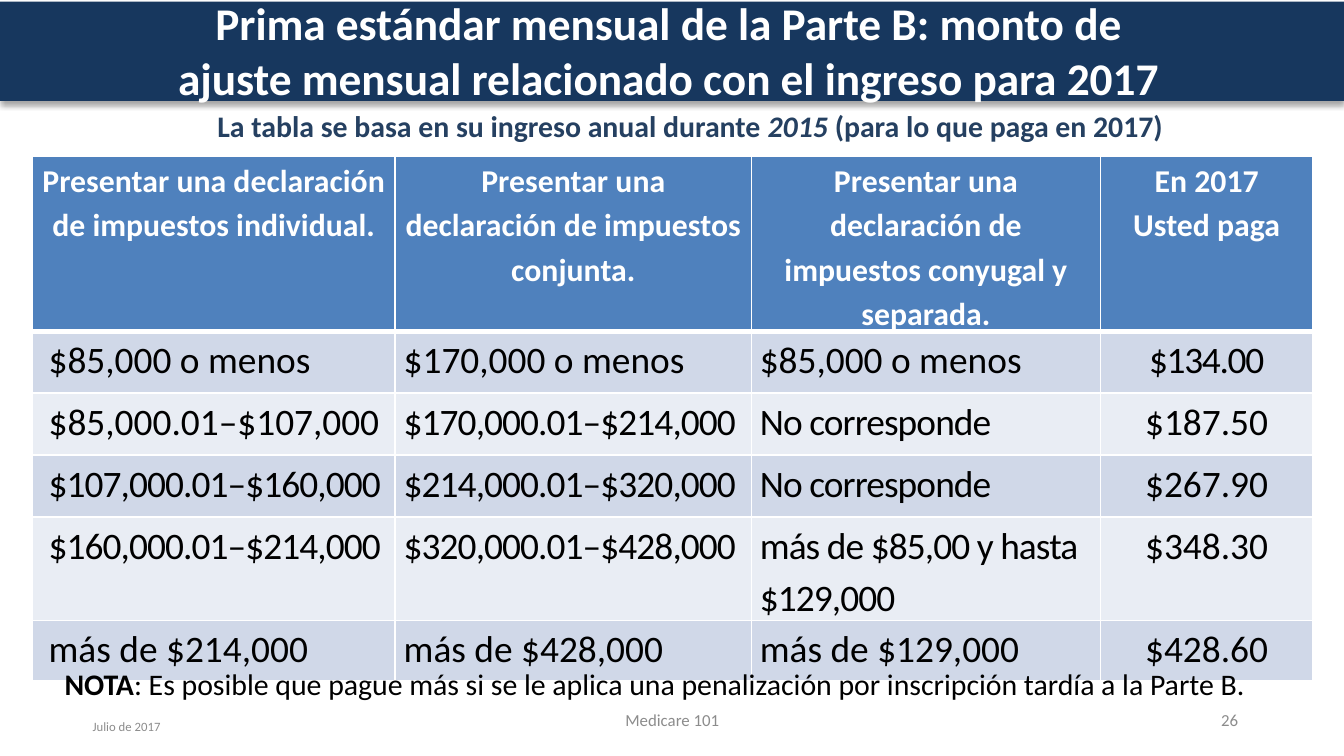
from lxml.etree import SubElement
from pptx import Presentation
from pptx.dml.color import RGBColor
from pptx.enum.shapes import MSO_SHAPE as Shape
from pptx.enum.text import MSO_ANCHOR as Anchor, PP_ALIGN as Align
from pptx.oxml import parse_xml
from pptx.oxml.ns import nsdecls, qn
from pptx.util import Cm, Pt

FONT = "Calibri"
WHITE, BLACK, GRAY = "FFFFFF", "000000", "8C8C8C"
NAVY, SUBTITLE_BLUE = "17375E", "254061"
HEADER_BLUE, BAND_DARK, BAND_LIGHT = "4F81BD", "D0D8E8", "E9EDF4"

COLUMN_WIDTHS = [6.86, 6.73, 6.6, 4.01]
ROW_HEIGHTS = [2.62, 1.17, 1.17, 1.17, 1.96, 1.14]
HEADERS = [
    ["Presentar una declaración de impuestos individual."],
    ["Presentar una declaración de impuestos conjunta."],
    ["Presentar una declaración de impuestos conyugal y separada."],
    ["En 2017", "Usted paga"],
]
INCOME_ROWS = [
    ["$85,000 o menos", "$170,000 o menos", "$85,000 o menos", "$134.00"],
    ["$85,000.01–$107,000", "$170,000.01–$214,000", "No corresponde", "$187.50"],
    ["$107,000.01–$160,000", "$214,000.01–$320,000", "No corresponde", "$267.90"],
    ["$160,000.01–$214,000", "$320,000.01–$428,000",
     "más de $85,00 y hasta $129,000", "$348.30"],
    ["más de $214,000", "más de $428,000", "más de $129,000", "$428.60"],
]
LETTER_SPACING = [
    [0, 0, 0, -70],
    [0, -50, -50, 0],
    [-50, -50, -50, 0],
    [-50, -50, -50, 0],
    [0, 0, 0, 0],
]


def color(code):
    return RGBColor.from_string(code)


def add_run(para, text, size, code, bold=False, italic=False, spacing=0):
    span = para.add_run()
    span.text = text
    font = span.font
    font.name, font.size = FONT, Pt(size)
    font.bold, font.italic = bold, italic
    font.color.rgb = color(code)
    if spacing:
        span._r.get_or_add_rPr().set("spc", str(spacing))


def add_text(page, place, align=Align.LEFT, anchor=Anchor.TOP):
    box = page.shapes.add_textbox(*map(Cm, place))
    frame = box.text_frame
    frame.word_wrap = True
    frame.vertical_anchor = anchor
    para = frame.paragraphs[0]
    para.alignment = align
    return para


def add_title_band(page):
    band = page.shapes.add_shape(Shape.RECTANGLE, Cm(0), Cm(0.03), Cm(25.4), Cm(1.88))
    band.fill.solid()
    band.fill.fore_color.rgb = color(NAVY)
    band.line.fill.background()
    band.shadow.inherit = False
    effects = band._element.spPr.find(qn("a:effectLst"))
    effects.append(parse_xml(
        f'<a:outerShdw {nsdecls("a")} blurRad="{Pt(3.1)}" dist="{Pt(1.8)}" '
        'dir="5400000" rotWithShape="0"><a:srgbClr val="000000">'
        '<a:alpha val="35000"/></a:srgbClr></a:outerShdw>'))


def add_borders(cell, bottom=1, top=1):
    properties = cell._tc.get_or_add_tcPr()
    for side, width in (("L", 1), ("R", 1), ("T", top), ("B", bottom)):
        line = SubElement(properties, qn(f"a:ln{side}"), w=str(Pt(width)))
        fill = SubElement(line, qn("a:solidFill"))
        SubElement(fill, qn("a:srgbClr"), val=WHITE)


def style_cell(cell, fill, left=0.16, top=1, bottom=1):
    add_borders(cell, bottom, top)
    cell.fill.solid()
    cell.fill.fore_color.rgb = color(fill)
    cell.margin_left, cell.margin_right = Cm(left), Cm(0.16)
    cell.margin_top = cell.margin_bottom = Cm(0)


def fill_cell(cell, lines, size, code, align, bold=False, spacing=0):
    frame = cell.text_frame
    for index, text in enumerate(lines):
        para = frame.add_paragraph() if index else frame.paragraphs[0]
        para.alignment = align
        para.line_spacing = 1.15
        add_run(para, text, size, code, bold=bold, spacing=spacing)


def add_premium_table(page):
    table = page.shapes.add_table(
        len(ROW_HEIGHTS), len(COLUMN_WIDTHS), Cm(0.61), Cm(2.95),
        Cm(sum(COLUMN_WIDTHS)), Cm(sum(ROW_HEIGHTS))).table
    table.horz_banding = False
    for column, width in zip(table.columns, COLUMN_WIDTHS):
        column.width = Cm(width)
    for row, height in zip(table.rows, ROW_HEIGHTS):
        row.height = Cm(height)

    for column, lines in enumerate(HEADERS):
        cell = table.cell(0, column)
        style_cell(cell, HEADER_BLUE, bottom=3)
        fill_cell(cell, lines, 17, WHITE, Align.CENTER, bold=True)

    last = len(COLUMN_WIDTHS) - 1
    for row, (texts, spacings) in enumerate(zip(INCOME_ROWS, LETTER_SPACING), 1):
        band = BAND_DARK if row % 2 else BAND_LIGHT
        for column, (text, spacing) in enumerate(zip(texts, spacings)):
            cell = table.cell(row, column)
            style_cell(cell, band, left=0.16 if column else 0.31, top=3 if row == 1 else 1)
            align = Align.CENTER if column == last else Align.LEFT
            fill_cell(cell, [text], 20, BLACK, align, spacing=spacing)


def add_note(page):
    para = add_text(page, (0.97, 12.45, 23.11, 0.94))
    properties = para._p.get_or_add_pPr()
    properties.set("marL", str(Cm(1.55)))
    properties.set("indent", str(-Cm(1.55)))
    add_run(para, "NOTA", 16, BLACK, bold=True)
    add_run(para, ": Es posible que pague más si se le aplica una penalización "
                  "por inscripción tardía a la Parte B.", 16, BLACK)


def add_footer(page):
    for text, size, place, align in (
        ("Julio de 2017", 6.8, (1.5, 13.36, 4.29, 0.76), Align.LEFT),
        ("Medicare 101", 9, (8.41, 13.23, 8.59, 0.76), Align.CENTER),
        ("26", 9, (17.93, 13.23, 5.72, 0.76), Align.RIGHT),
    ):
        add_run(add_text(page, place, align, Anchor.MIDDLE), text, size, GRAY)


def main():
    deck = Presentation()
    deck.slide_width, deck.slide_height = Cm(25.4), Cm(14.29)
    page = deck.slides.add_slide(deck.slide_layouts[6])

    add_title_band(page)
    title = add_text(page, (2.92, -0.1, 19.43, 2.08), Align.CENTER, Anchor.MIDDLE)
    add_run(title, "Prima estándar mensual de la Parte B: monto de ajuste mensual "
                   "relacionado con el ingreso para 2017", 24.3, WHITE, bold=True)

    subtitle = add_text(page, (3.05, 1.91, 19.99, 0.94), Align.CENTER)
    for text, italic in (
        ("La tabla se basa en su ingreso anual durante ", False),
        ("2015 ", True),
        ("(para lo que paga en 2017)", False),
    ):
        add_run(subtitle, text, 16, SUBTITLE_BLUE, bold=True, italic=italic)

    add_premium_table(page)
    add_note(page)
    add_footer(page)
    deck.save("out.pptx")


if __name__ == "__main__":
    main()
